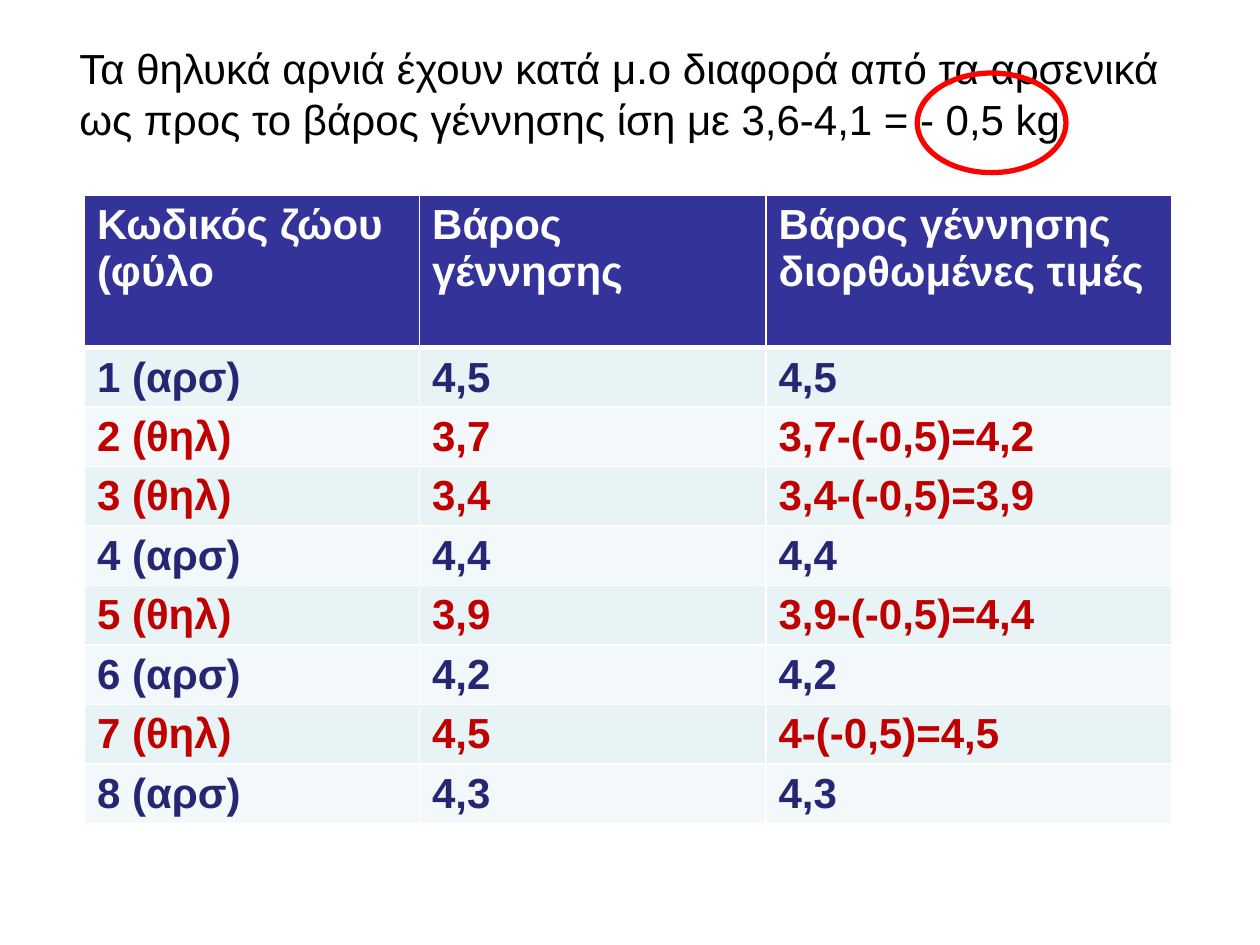
from pptx import Presentation
from pptx.dml.color import RGBColor
from pptx.enum.shapes import MSO_SHAPE
from pptx.enum.text import MSO_ANCHOR, MSO_AUTO_SIZE, PP_ALIGN
from pptx.util import Inches, Pt
from lxml.etree import SubElement
from pptx.oxml.ns import qn

BLACK = RGBColor(0, 0, 0)
WHITE = RGBColor(255, 255, 255)
RED = RGBColor(255, 0, 0)
CRIMSON = RGBColor(0xC0, 0, 0)
NAVY = RGBColor(0x26, 0x26, 0x73)
INDIGO = RGBColor(0x33, 0x33, 0x99)
BANDS = [RGBColor(0xF3, 0xF9, 0xFA), RGBColor(0xE7, 0xF3, 0xF4)]


def write(frame, text, color=BLACK, bold=False, size=24):
    para = frame.paragraphs[0]
    para.alignment = PP_ALIGN.LEFT
    run = para.add_run()
    run.text = text
    run.font.name = "Arial"
    run.font.size = Pt(size)
    run.font.bold = bold
    run.font.color.rgb = color


def border(cell, side, width):
    props = cell._tc.get_or_add_tcPr()
    line = SubElement(props, qn("a:ln" + side), w=str(Pt(width)))
    fill = SubElement(line, qn("a:solidFill"))
    SubElement(fill, qn("a:srgbClr"), val=str(WHITE))


deck = Presentation()
deck.slide_width, deck.slide_height = Inches(10), Inches(7.5)
slide = deck.slides.add_slide(deck.slide_layouts[5])

title = slide.shapes.title
title.left, title.top = Inches(0.53), Inches(0.29)
title.width, title.height = Inches(8.9), Inches(0.91)
frame = title.text_frame
frame.word_wrap = True
frame.auto_size = MSO_AUTO_SIZE.NONE
frame.vertical_anchor = MSO_ANCHOR.TOP
write(frame, "Τα θηλυκά αρνιά έχουν κατά μ.ο διαφορά από τα αρσενικά "
             "ως προς το βάρος γέννησης ίση με 3,6-4,1 = - 0,5 kg")

rows = [
    ("Κωδικός ζώου (φύλο", "Βάρος γέννησης", "Βάρος γέννησης διορθωμένες τιμές"),
    ("1 (αρσ)", "4,5", "4,5"),
    ("2 (θηλ)", "3,7", "3,7-(-0,5)=4,2"),
    ("3 (θηλ)", "3,4", "3,4-(-0,5)=3,9"),
    ("4 (αρσ)", "4,4", "4,4"),
    ("5 (θηλ)", "3,9", "3,9-(-0,5)=4,4"),
    ("6 (αρσ)", "4,2", "4,2"),
    ("7 (θηλ)", "4,5", "4-(-0,5)=4,5"),
    ("8 (αρσ)", "4,3", "4,3"),
]
widths = [2.66, 2.75, 3.22]
heights = [1.21] + [0.47] * 8
table = slide.shapes.add_table(
    len(rows), len(widths), Inches(0.67), Inches(1.55),
    Inches(sum(widths)), Inches(sum(heights))).table
for col, width in zip(table.columns, widths):
    col.width = Inches(width)
for i, (row, height) in enumerate(zip(rows, heights)):
    table.rows[i].height = Inches(height)
    if i == 0:
        color, shade = WHITE, INDIGO
    else:
        color = CRIMSON if "θηλ" in row[0] else NAVY
        shade = BANDS[i % 2]
    for j, text in enumerate(row):
        cell = table.cell(i, j)
        for side in "LRTB":
            thick = (i, side) in [(0, "B"), (1, "T")]
            border(cell, side, 3 if thick else 1)
        cell.fill.solid()
        cell.fill.fore_color.rgb = shade
        write(cell.text_frame, text, color=color, bold=True)

ring = slide.shapes.add_shape(
    MSO_SHAPE.OVAL, Inches(7.28), Inches(0.58), Inches(1.18), Inches(0.79))
ring.shadow.inherit = False
ring.fill.background()
ring.line.color.rgb = RED
ring.line.width = Pt(3)

deck.save("out.pptx")
